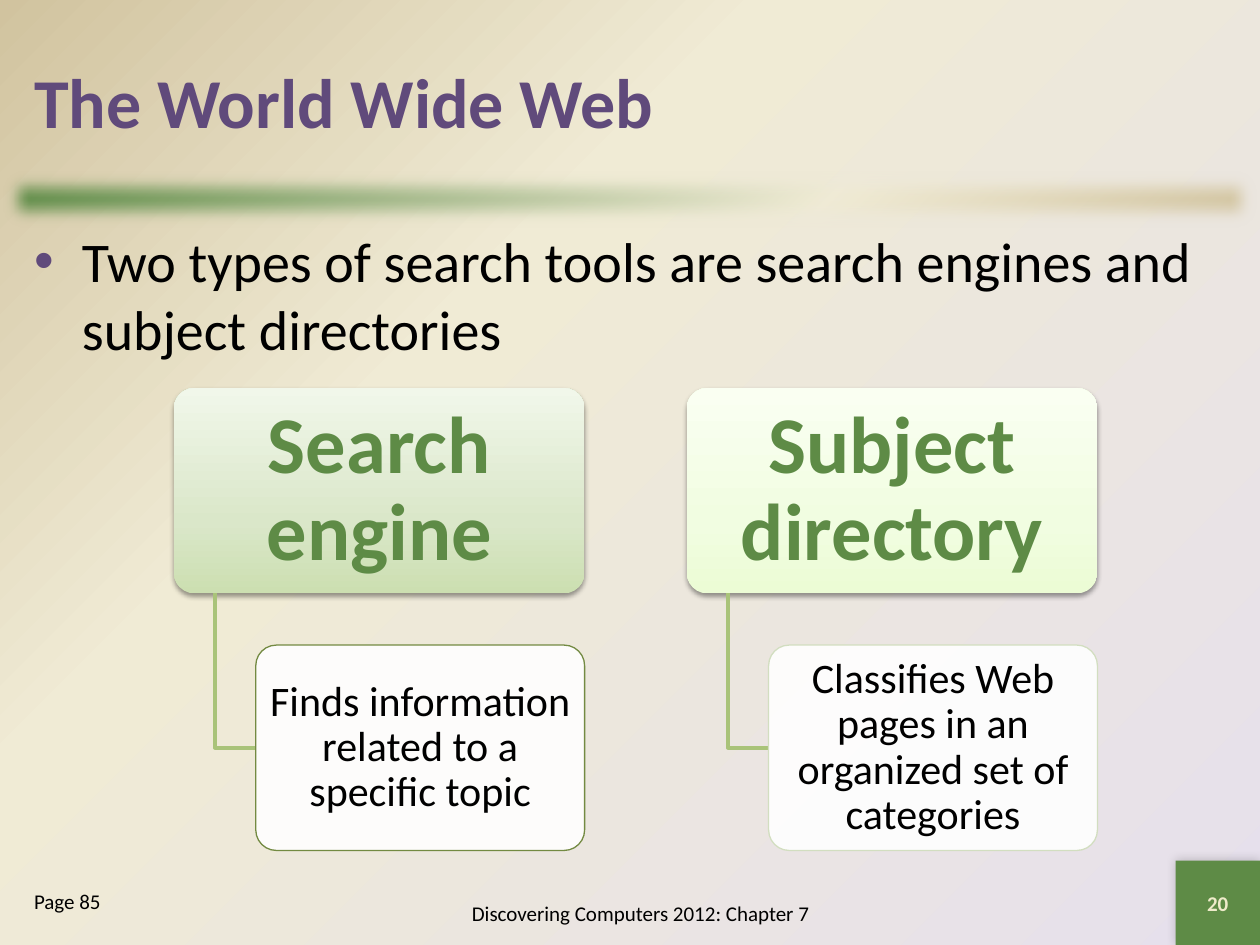
from lxml import etree
from pptx import Presentation
from pptx.dml.color import RGBColor
from pptx.enum import shapes, text
from pptx.oxml.ns import qn
from pptx.util import Inches, Pt

PURPLE = RGBColor(0x60, 0x4A, 0x7B)
GREEN = RGBColor(0x5E, 0x8B, 0x46)
CREAM = RGBColor(0xF0, 0xEB, 0xD5)
TAN = RGBColor(0xD1, 0xC3, 0x9F)
LAVENDER = RGBColor(0xE6, 0xE0, 0xEC)
PALE_YELLOW = RGBColor(0xEE, 0xEB, 0xCA)
BRANCH_GREEN = RGBColor(0xA9, 0xC3, 0x79)
OLIVE = RGBColor(0x73, 0x8A, 0x42)
MIST = RGBColor(0xD2, 0xDE, 0xC0)
WHITE = RGBColor(0xFF, 0xFF, 0xFF)
BLACK = RGBColor(0, 0, 0)
SAGE_STOPS = [(0, RGBColor(0xCC, 0xDF, 0xB1)), (35, RGBColor(0xDA, 0xE7, 0xC9)),
              (100, RGBColor(0xF1, 0xF7, 0xEA))]
LIME_STOPS = [(0, RGBColor(0xEC, 0xFC, 0xD5)), (35, RGBColor(0xF1, 0xFD, 0xE1)),
              (100, RGBColor(0xFA, 0xFF, 0xF2))]

HEAD_W, DETAIL_W, BOX_H = 3.26, 2.61, 1.63
HEAD_TOP, DETAIL_TOP = 3.08, 5.12
BRANCHES = [
    (1.38, "Search engine", SAGE_STOPS,
     "Finds information related to a specific topic", OLIVE),
    (5.45, "Subject directory", LIME_STOPS,
     "Classifies Web pages in an organized set of categories", MIST),
]


def add(parent, tag, **attributes):
    child = etree.SubElement(parent, qn(tag))
    for key, value in attributes.items():
        child.set(key, str(value))
    return child


def set_gradient(fill, holder, stops, angle=None):
    """Fill with stops (percent, colour); without an angle, spread from the lower right corner."""
    fill.gradient()
    gradient = holder.find(qn("a:gradFill"))
    for child in list(gradient):
        gradient.remove(child)
    stop_list = add(gradient, "a:gsLst")
    for percent, colour in stops:
        add(add(stop_list, "a:gs", pos=percent * 1000), "a:srgbClr", val=colour)
    if angle is None:
        circle = add(gradient, "a:path", path="circle")
        add(circle, "a:fillToRect", l=100000, t=100000)
    else:
        add(gradient, "a:lin", ang=angle * 60000, scaled=0)


def add_effect(shape, tag, **attributes):
    return add(shape.element.spPr.find(qn("a:effectLst")), tag, **attributes)


def add_shadow(shape, opacity, blur, distance, angle):
    shadow = add_effect(shape, "a:outerShdw", blurRad=Pt(blur), dist=Pt(distance),
                        dir=angle * 60000, rotWithShape=0)
    add(add(shadow, "a:srgbClr", val=BLACK), "a:alpha", val=opacity * 1000)


def place(shape, left, top, width, height):
    shape.left, shape.top = Inches(left), Inches(top)
    shape.width, shape.height = Inches(width), Inches(height)


def add_box(slide, kind, *bounds):
    box = slide.shapes.add_shape(kind, *map(Inches, bounds))
    box.shadow.inherit = False
    box.line.fill.background()
    return box


def write(shape, wording, size, colour=BLACK, bold=False, align=text.PP_ALIGN.LEFT,
          anchor=text.MSO_ANCHOR.MIDDLE, insets=(0.1, 0.05)):
    frame = shape.text_frame
    frame.word_wrap = True
    frame.auto_size = text.MSO_AUTO_SIZE.NONE
    frame.vertical_anchor = anchor
    frame.margin_left = frame.margin_right = Inches(insets[0])
    frame.margin_top = frame.margin_bottom = Inches(insets[1])
    frame.text = wording
    paragraph = frame.paragraphs[0]
    paragraph.alignment = align
    paragraph.space_before = Pt(0)
    font = paragraph.font
    font.name, font.size, font.bold = "Calibri", Pt(size), bold
    font.color.rgb = colour
    return paragraph


def write_body(placeholder, wording, size, bullet_colour=None):
    """Fill a body placeholder; without a bullet colour it has no bullet."""
    paragraph = write(placeholder, wording, size, anchor=text.MSO_ANCHOR.TOP)
    properties = paragraph._p.get_or_add_pPr()
    properties.set("marL", str(Inches(0.38)))
    properties.set("indent", str(Inches(-0.38)))
    if bullet_colour is None:
        bullets = [etree.Element(qn("a:buNone"))]
    else:
        colour = etree.Element(qn("a:buClr"))
        add(colour, "a:srgbClr", val=bullet_colour)
        face = etree.Element(qn("a:buFont"), typeface="Arial")
        bullets = [colour, face, etree.Element(qn("a:buChar"), char="•")]
    run_defaults = properties.find(qn("a:defRPr"))
    for bullet in bullets:
        run_defaults.addprevious(bullet)


def add_elbow(slide, left, top, right, bottom):
    left, top, right, bottom = map(Inches, (left, top, right, bottom))
    builder = slide.shapes.build_freeform(left, top)
    builder.add_line_segments([(left, bottom), (right, bottom)], close=False)
    elbow = builder.convert_to_shape()
    elbow.shadow.inherit = False
    elbow.fill.background()
    elbow.line.color.rgb = BRANCH_GREEN
    elbow.line.width = Pt(2)


def add_branch(slide, left, heading, stops, detail, outline):
    rounded = shapes.MSO_SHAPE.ROUNDED_RECTANGLE
    detail_left = left + HEAD_W - DETAIL_W

    head = add_box(slide, rounded, left, HEAD_TOP, HEAD_W, BOX_H)
    head.adjustments[0] = 0.1
    set_gradient(head.fill, head.element.spPr, stops, 270)
    add_shadow(head, 38, 3.1, 1.6, 90)
    write(head, heading, 46, GREEN, True, text.PP_ALIGN.CENTER,
          insets=(0.1, 0.06)).line_spacing = 0.9

    add_elbow(slide, left + HEAD_W / 10, HEAD_TOP + BOX_H,
              detail_left, DETAIL_TOP + BOX_H / 2)

    leaf = add_box(slide, rounded, detail_left, DETAIL_TOP, DETAIL_W, BOX_H)
    leaf.adjustments[0] = 0.1
    leaf.fill.solid()
    leaf.fill.fore_color.rgb = WHITE
    white = leaf.element.spPr.find(qn("a:solidFill")).find(qn("a:srgbClr"))
    add(white, "a:alpha", val=90000)
    leaf.line.color.rgb = outline
    leaf.line.width = Pt(0.75)
    write(leaf, detail, 24, align=text.PP_ALIGN.CENTER,
          insets=(0.05, 0.03)).line_spacing = 0.9


def add_divider(slide):
    divider = add_box(slide, shapes.MSO_SHAPE.RECTANGLE, 0, 1.33, 10, 0.5)
    set_gradient(divider.fill, divider.element.spPr,
                 [(0, GREEN), (65, CREAM), (100, TAN)], 45)
    add_effect(divider, "a:softEdge", rad=Pt(10))


def add_page_badge(slide):
    badge = add_box(slide, shapes.MSO_SHAPE.RECTANGLE, 9.33, 6.83, 0.67, 0.67)
    badge.fill.solid()
    badge.fill.fore_color.rgb = GREEN
    add_shadow(badge, 20, 6, 0, 225)
    write(badge, "20", 12, PALE_YELLOW, True, text.PP_ALIGN.CENTER)


def main():
    deck = Presentation()
    deck.slide_width, deck.slide_height = Inches(10), Inches(7.5)
    slide = deck.slides.add_slide(deck.slide_layouts.get_by_name("Two Content"))
    background = slide.background.fill
    background.solid()
    set_gradient(background, slide.element.find(".//" + qn("p:bgPr")),
                 [(0, LAVENDER), (65, CREAM), (100, TAN)])

    title, body, page_reference = slide.placeholders
    place(title, 0.17, 0.17, 9.67, 1.25)
    write(title, "The World Wide Web", 40, PURPLE, True)
    place(body, 0.17, 1.75, 9.67, 5.08)
    write_body(body, "Two types of search tools are search engines and subject directories",
               32, PURPLE)
    place(page_reference, 0.17, 7, 1.83, 0.5)
    write_body(page_reference, "Page 85", 12)

    add_divider(slide)
    add_page_badge(slide)
    footer = slide.shapes.add_textbox(*map(Inches, (3, 7, 4.17, 0.5)))
    write(footer, "Discovering Computers 2012: Chapter 7", 12, align=text.PP_ALIGN.CENTER)
    for branch in BRANCHES:
        add_branch(slide, *branch)
    deck.save("out.pptx")


if __name__ == "__main__":
    main()
